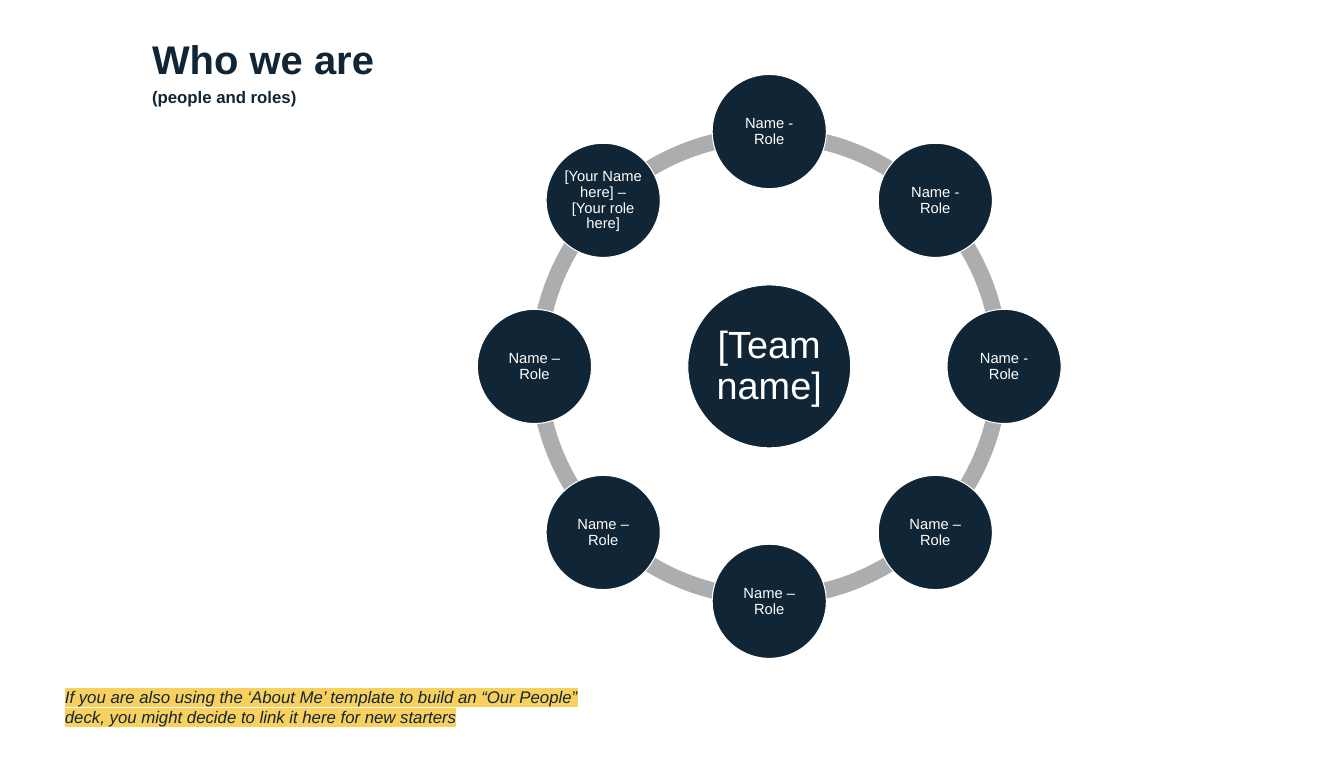
import math
from lxml import etree
from pptx import Presentation
from pptx import util as u
from pptx.dml import color
from pptx.enum import shapes, text
from pptx.oxml import ns

NAVY, GREY, WHITE, YELLOW = "102535", "ABADAE", "FFFFFF", "F8D05E"
CENTER_X, CENTER_Y = 731.9, 348.5
ORBIT_RADIUS = 223.4
RING_SIZE = 455
PERSON_SIZE = 108.6
TEAM_SIZE = 155


def rgb(value):
    return color.RGBColor.from_string(value)


def format_run(run, size, hex_color, bold=False, italic=False):
    run.font.name = "Arial"
    run.font.size = u.Pt(size)
    run.font.bold = bold
    run.font.italic = italic
    run.font.color.rgb = rgb(hex_color)


presentation = Presentation()
presentation.slide_width = u.Pt(1278.72)
presentation.slide_height = u.Pt(720)
slide = presentation.slides.add_slide(presentation.slide_layouts[6])

title = slide.shapes.add_textbox(u.Pt(144.7), u.Pt(23.8), u.Pt(919.4), u.Pt(141))
frame = title.text_frame
frame.word_wrap = True
frame.margin_left = frame.margin_right = frame.margin_top = frame.margin_bottom = 0
frame.text = "Who we are\v(people and roles)"
paragraph = frame.paragraphs[0]
paragraph.line_spacing = 1.2
for run, size in zip(paragraph.runs, (38, 16)):
    format_run(run, size, NAVY, bold=True)

for index in range(8):
    arc = slide.shapes.add_shape(
        shapes.MSO_SHAPE.BLOCK_ARC,
        u.Pt(CENTER_X - RING_SIZE / 2), u.Pt(CENTER_Y - RING_SIZE / 2),
        u.Pt(RING_SIZE), u.Pt(RING_SIZE))
    arc.shadow.inherit = False
    arc.adjustments[0] = index * 27
    arc.adjustments[1] = (index + 1) % 8 * 27
    arc.adjustments[2] = 0.034
    arc.fill.solid()
    arc.fill.fore_color.rgb = rgb(GREY)
    arc.line.fill.background()

people = ["Name - Role"] * 3 + ["Name – Role"] * 4 + ["[Your Name here] – [Your role here]"]
circles = [("[Team name]", CENTER_X, CENTER_Y, TEAM_SIZE, 36, 3.6)]
for index, person in enumerate(people):
    angle = math.radians(index * 45 - 90)
    x = CENTER_X + ORBIT_RADIUS * math.cos(angle)
    y = CENTER_Y + ORBIT_RADIUS * math.sin(angle)
    circles.append((person, x, y, PERSON_SIZE, 14, 1.4))

for label, x, y, diameter, font_size, margin in circles:
    circle = slide.shapes.add_shape(
        shapes.MSO_SHAPE.OVAL, u.Pt(x - diameter / 2), u.Pt(y - diameter / 2),
        u.Pt(diameter), u.Pt(diameter))
    circle.shadow.inherit = False
    circle.fill.solid()
    circle.fill.fore_color.rgb = rgb(NAVY)
    circle.line.color.rgb = rgb(WHITE)
    circle.line.width = u.Pt(1)
    frame = circle.text_frame
    frame.word_wrap = True
    frame.vertical_anchor = text.MSO_ANCHOR.MIDDLE
    frame.margin_left = frame.margin_right = u.Pt(margin)
    frame.margin_top = frame.margin_bottom = u.Pt(margin)
    frame.text = label
    paragraph = frame.paragraphs[0]
    paragraph.alignment = text.PP_ALIGN.CENTER
    paragraph.line_spacing = 0.9
    format_run(paragraph.runs[0], font_size, WHITE)

note = slide.shapes.add_textbox(u.Pt(54.7), u.Pt(649.4), u.Pt(509), u.Pt(46))
frame = note.text_frame
frame.word_wrap = True
frame.auto_size = text.MSO_AUTO_SIZE.SHAPE_TO_FIT_TEXT
frame.text = (
    "If you are also using the ‘About Me’ template to build an “Our People” deck, "
    "you might decide to link it here for new starters")
run = frame.paragraphs[0].runs[0]
format_run(run, 16, NAVY, italic=True)
highlight = etree.Element(ns.qn("a:highlight"))
etree.SubElement(highlight, ns.qn("a:srgbClr"), val=YELLOW)
run.font._element.find(ns.qn("a:solidFill")).addnext(highlight)

presentation.save("out.pptx")
